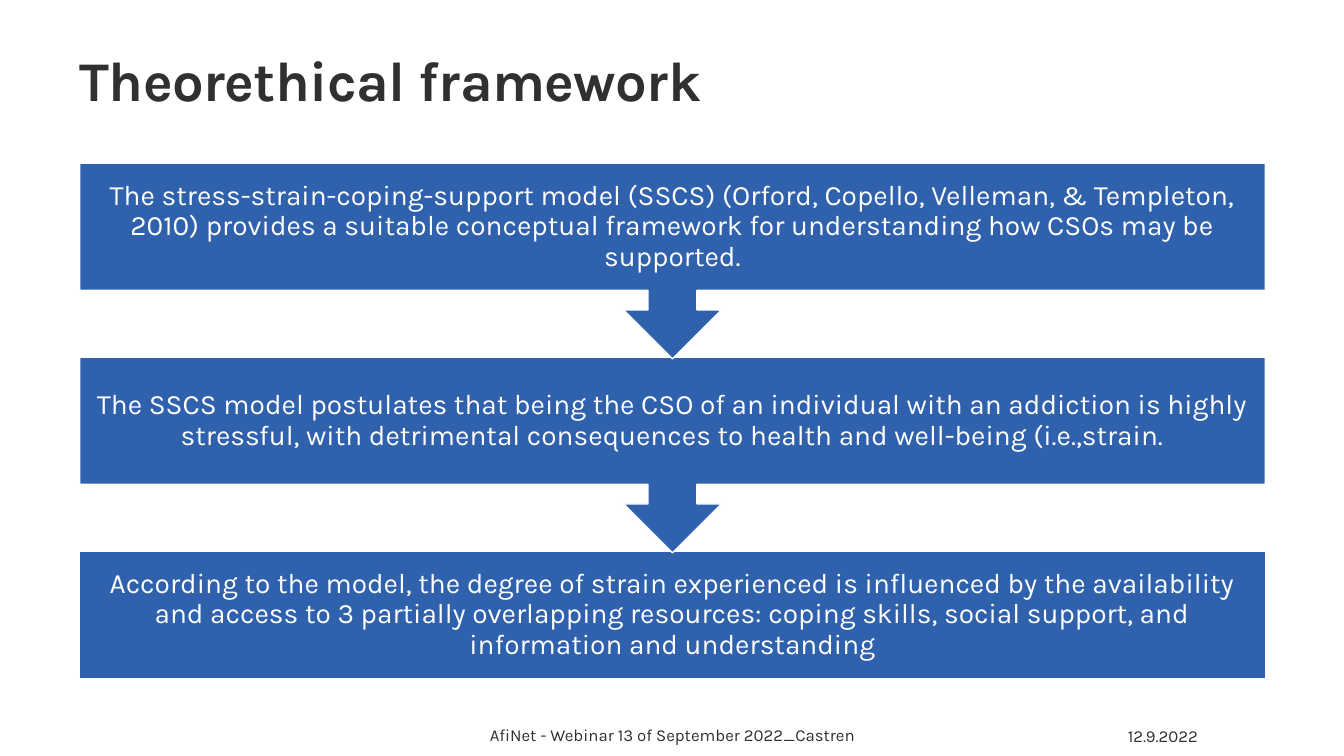
from dataclasses import dataclass

from pptx import Presentation
from pptx.dml.color import RGBColor
from pptx.enum.shapes import MSO_SHAPE as Shape
from pptx.enum.text import MSO_ANCHOR as Anchor, PP_ALIGN as Align
from pptx.slide import Slide
from pptx.text.text import TextFrame
from pptx.util import Inches, Pt

BLUE = RGBColor(0x2F, 0x61, 0xAD)
DARK = RGBColor(0x30, 0x30, 0x30)
WHITE = RGBColor(0xFF, 0xFF, 0xFF)
FONT = "Karla"

LEFT, WIDTH = 0.79, 11.76
FIRST_TOP, LAST_TOP = 1.62, 5.47
BOX_HEIGHT, CALLOUT_HEIGHT = 1.26, 1.94


@dataclass
class Label:
    text: str
    left: float
    top: float
    width: float
    height: float
    size: float
    align: Align
    insets: tuple[float, float, float, float] = (0.1, 0.05, 0.1, 0.05)
    bold: bool = False
    line_spacing: float = 1.0
    space_after: float = 0
    tracking: float = 0


TITLE = Label("Theorethical framework", LEFT, 0.2, WIDTH, 1.3, 40, Align.LEFT,
              insets=(0, 0.04, 0.08, 0.04), bold=True, line_spacing=0.8, tracking=-0.4)
DATE = Label("12.9.2022", 10.8, 7.09, 1.18, 0.42, 12, Align.RIGHT, space_after=6)
FOOTER = Label("AfiNet - Webinar 13 of September 2022_Castren",
               2.87, 7.09, 7.6, 0.4, 12, Align.CENTER, space_after=6)

STEPS = [
    "The stress-strain-coping-support model (SSCS) (Orford, Copello, Velleman, & Templeton, "
    "2010) provides a suitable conceptual framework for understanding how CSOs may be supported.",
    "The SSCS model postulates that being the CSO of an individual with an addiction is highly "
    "stressful, with detrimental consequences to health and well-being (i.e.,strain.",
    "According to the model, the degree of strain experienced is influenced by the availability "
    "and access to 3 partially overlapping resources: coping skills, social support, and "
    "information and understanding",
]


def write_text(frame: TextFrame, text: str, size: float, color: RGBColor, align: Align,
               insets: tuple[float, float, float, float], line_spacing: float) -> None:
    frame.text = text
    frame.word_wrap = True
    frame.vertical_anchor = Anchor.MIDDLE
    (frame.margin_left, frame.margin_top,
     frame.margin_right, frame.margin_bottom) = map(Inches, insets)
    para = frame.paragraphs[0]
    para.alignment = align
    para.line_spacing = line_spacing
    font = para.runs[0].font
    font.name, font.size, font.color.rgb = FONT, Pt(size), color


def add_label(page: Slide, label: Label) -> None:
    box = page.shapes.add_textbox(Inches(label.left), Inches(label.top),
                                  Inches(label.width), Inches(label.height))
    write_text(box.text_frame, label.text, label.size, DARK, label.align,
               label.insets, label.line_spacing)
    para = box.text_frame.paragraphs[0]
    para.space_after = Pt(label.space_after)
    span = para.runs[0]
    span.font.bold = label.bold
    if label.tracking:
        span._r.get_or_add_rPr().set("spc", str(round(label.tracking * 100)))


def add_step(page: Slide, text: str, top: float, is_last: bool) -> None:
    kind = Shape.RECTANGLE if is_last else Shape.DOWN_ARROW_CALLOUT
    height = BOX_HEIGHT if is_last else CALLOUT_HEIGHT
    box = page.shapes.add_shape(kind, Inches(LEFT), Inches(top), Inches(WIDTH), Inches(height))
    box.shadow.inherit = False
    box.fill.solid()
    box.fill.fore_color.rgb = BLUE
    box.line.color.rgb = WHITE
    box.line.width = Pt(1)
    write_text(box.text_frame, text, 20, WHITE, Align.CENTER, (0.16,) * 4, 0.9)


def main() -> None:
    deck = Presentation()
    deck.slide_width, deck.slide_height = Inches(13.33), Inches(7.5)
    page = deck.slides.add_slide(deck.slide_layouts[6])

    # Title and footer
    for label in (TITLE, DATE, FOOTER):
        add_label(page, label)

    # Steps from the bottom up, so each arrow tip lies over the next box
    last = len(STEPS) - 1
    pitch = (LAST_TOP - FIRST_TOP) / last
    for index in range(last, -1, -1):
        add_step(page, STEPS[index], FIRST_TOP + index * pitch, index == last)

    deck.save("out.pptx")


if __name__ == "__main__":
    main()
